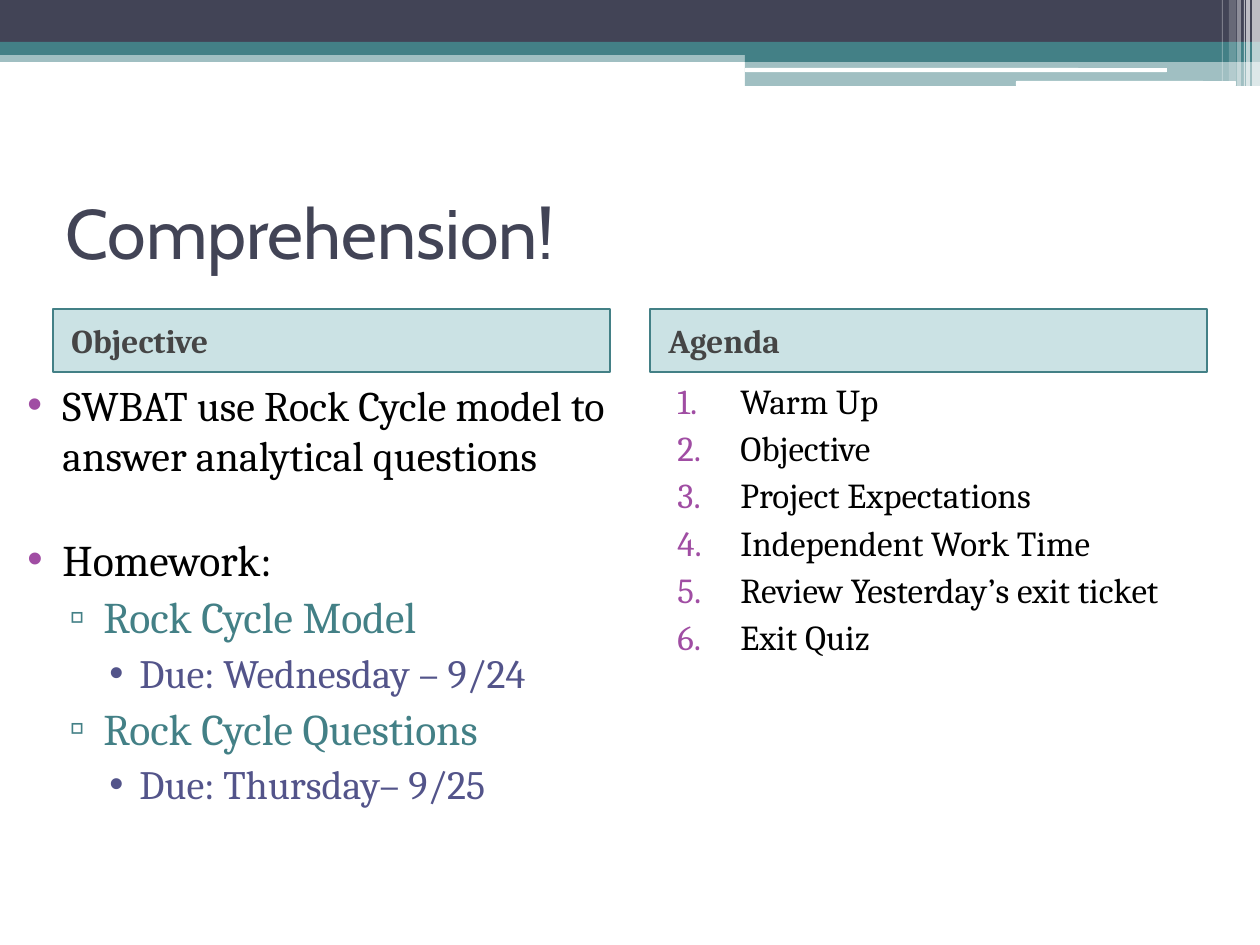
import pptx
import pptx.util
import pptx.dml.color
import pptx.enum.shapes
import pptx.enum.text
import pptx.oxml.ns
import lxml.etree

SCALE = 914400 / 126
TEAL, NAVY, WHITE, PURPLE, INDIGO = "438086", "424456", "FFFFFF", "A04DA3", "53548A"
SHAPES = pptx.enum.shapes.MSO_SHAPE
MIDDLE = pptx.enum.text.MSO_ANCHOR.MIDDLE
LEFT = pptx.enum.text.PP_ALIGN.LEFT


def px(n):
    """Turn pixels into EMU."""
    return pptx.util.Emu(round(n * SCALE))


def rgb(color):
    """Turn a hex string into a colour."""
    return pptx.dml.color.RGBColor.from_string(color)


def child(parent, tag, **attrs):
    """Append a DrawingML element with attributes."""
    return lxml.etree.SubElement(parent, pptx.oxml.ns.qn(tag), attrs)


def add_box(s, x, y, w, h, color, alpha=100, line=None, kind=SHAPES.RECTANGLE):
    """Add a filled shape, optionally translucent or outlined."""
    sp = s.shapes.add_shape(kind, px(x), px(y), px(w), px(h))
    sp.shadow.inherit = False
    sp.fill.solid()
    sp.fill.fore_color.rgb = rgb(color)
    if alpha < 100:
        fill = sp._element.spPr.find(pptx.oxml.ns.qn("a:solidFill"))
        child(fill[0], "a:alpha", val=str(alpha * 1000))
    if line:
        sp.line.color.rgb = rgb(line)
        sp.line.width = pptx.util.Pt(1)
    else:
        sp.line.fill.background()
    return sp


def add_run(p, text, size, color, font="Cambria", bold=False):
    """Add one formatted run to a paragraph."""
    r = p.add_run()
    r.text = text
    r.font.size = pptx.util.Pt(size)
    r.font.name = font
    r.font.bold = bold
    r.font.color.rgb = rgb(color)


def set_bullet(p, margin, hang, color, char=None):
    """Give a paragraph a hanging bullet, or a number if no character is given."""
    pPr = p._p.get_or_add_pPr()
    pPr.set("marL", str(px(margin)))
    pPr.set("indent", str(-px(hang)))
    child(child(pPr, "a:buClr"), "a:srgbClr", val=color)
    if char:
        child(pPr, "a:buFont", typeface="Arial")
        child(pPr, "a:buChar", char=char)
    else:
        child(pPr, "a:buFont", typeface="+mj-lt")
        child(pPr, "a:buAutoNum", type="arabicPeriod")


def add_text_frame(s, x, y, w, h):
    """Add a wrapping text box and return its frame."""
    tf = s.shapes.add_textbox(px(x), px(y), px(w), px(h)).text_frame
    tf.word_wrap = True
    return tf


def add_banner(s, x, y, w):
    """Draw the layered band across the top with its stripes at the right end."""
    right, split = x + w, x + 745
    add_box(s, x, y + 50, w, 12, TEAL, 50)
    add_box(s, x, y, w, 42, NAVY)
    add_box(s, x, y + 42, w, 13, TEAL)
    add_box(s, split, y + 49, right - split, 13, TEAL)
    add_box(s, split, y + 61, right - split, 25, TEAL, 50)
    for left, top, width, height in ((745, 68, 422, 4), (1016, 81, 220, 5)):
        add_box(s, x + left, y + top, width, height, WHITE, kind=SHAPES.ROUNDED_RECTANGLE)
    stripes = ((8, 8, 86, 65), (14, 4, 86, 65), (16, 1, 86, 60),
               (23, 4, 86, 40), (31, 7, 81, 20), (38, 1, 81, 30))
    for offset, width, height, alpha in stripes:
        add_box(s, right - offset, y, width, height, WHITE, alpha)


def add_title(s, x, y, w, h, text):
    """Place and format the title placeholder."""
    sp = s.shapes.title
    sp.left, sp.top, sp.width, sp.height = px(x), px(y), px(w), px(h)
    tf = sp.text_frame
    tf.vertical_anchor = MIDDLE
    p = tf.paragraphs[0]
    p.alignment = LEFT
    add_run(p, text, 40, NAVY, "Cabin")


def add_heading(s, x, y, w, h, text):
    """Add a tinted column heading."""
    tf = add_box(s, x, y, w, h, "328E97", 25, TEAL).text_frame
    tf.word_wrap = True
    tf.vertical_anchor = MIDDLE
    p = tf.paragraphs[0]
    p.alignment = LEFT
    p.space_before = pptx.util.Pt(3)
    p._p.get_or_add_pPr().set("marL", str(px(6)))
    add_run(p, text, 19, "454545", bold=True)


def add_objective(s, x, y, w, h):
    """Add the multilevel objective and homework list."""
    levels = ((50, 35, "•", PURPLE, "000000"), (91, 34, "▫", TEAL, TEAL),
              (127, 30, "•", INDIGO, INDIGO))
    items = ((0, 24, 3, "SWBAT use Rock Cycle model to answer analytical questions"),
             (0, 25, 30, "Homework:"),
             (1, 25, 3, "Rock Cycle Model"), (2, 23, 3, "Due: Wednesday – 9/24"),
             (1, 25, 3, "Rock Cycle Questions"), (2, 23, 3, "Due: Thursday– 9/25"))
    tf = add_text_frame(s, x, y, w, h)
    for i, (level, size, before, text) in enumerate(items):
        p = tf.add_paragraph() if i else tf.paragraphs[0]
        margin, hang, char, bullet_color, color = levels[level]
        p.level = level
        p.space_before = pptx.util.Pt(before)
        set_bullet(p, margin, hang, bullet_color, char)
        add_run(p, text, size, color)


def add_agenda(s, x, y, w, h):
    """Add the numbered agenda."""
    items = ("Warm Up", "Objective", "Project Expectations", "Independent Work Time",
             "Review Yesterday’s exit ticket", "Exit Quiz")
    tf = add_text_frame(s, x, y, w, h)
    for i, text in enumerate(items):
        p = tf.add_paragraph() if i else tf.paragraphs[0]
        p.space_before = pptx.util.Pt(3)
        set_bullet(p, 78, 63, PURPLE)
        add_run(p, text, 20, "000000")


def main():
    """Build and save the slide."""
    prs = pptx.Presentation()
    prs.slide_width, prs.slide_height = px(1260), px(945)
    s = prs.slides.add_slide(prs.slide_layouts[5])
    add_banner(s, 0, 0, 1260)
    add_title(s, 53, 158, 1155, 147, "Comprehension!")
    for x, text in ((53, "Objective"), (650, "Agenda")):
        add_heading(s, x, 309, 557, 63, text)
    add_objective(s, 0, 373, 650, 536)
    add_agenda(s, 650, 373, 610, 536)
    prs.save("out.pptx")


if __name__ == "__main__":
    main()
